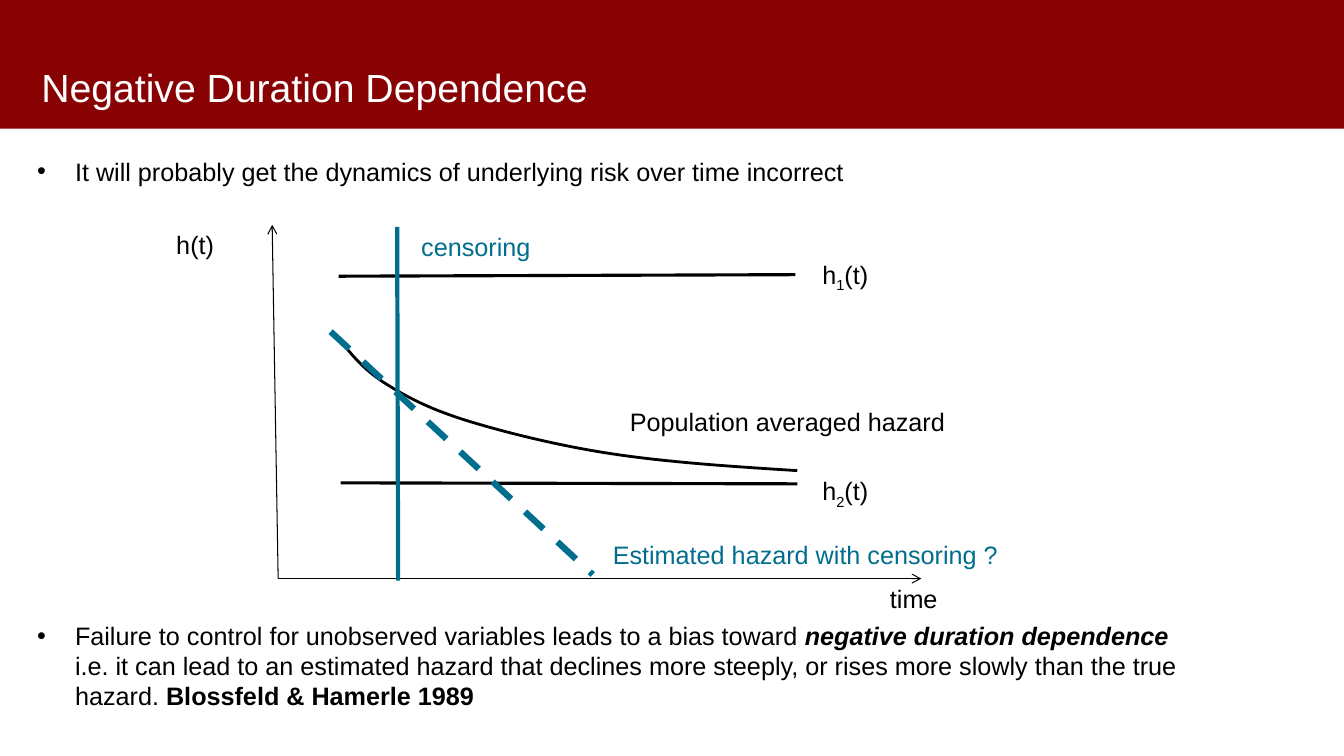
from dataclasses import dataclass
from typing import Any, Optional

from lxml import etree
from pptx import Presentation
from pptx.dml.color import RGBColor
from pptx.enum import dml, shapes, text
from pptx.oxml import ns
from pptx.util import Pt

MAROON = RGBColor(0x89, 0x02, 0x03)
TEAL = RGBColor(0x01, 0x6E, 0x8D)
BLACK = RGBColor(0, 0, 0)
WHITE = RGBColor(255, 255, 255)
FONT = "Arial"
TEXT_SIZE = 18
LABEL_HEIGHT = 28.8
BULLET_INDENT = 27
FIGURE_GAP = 310

Point = tuple[float, float]


@dataclass
class Line:
    start: Point
    end: Point
    width: float
    color: RGBColor = BLACK
    arrow: Optional[str] = None
    dashed: bool = False


@dataclass
class Label:
    left: float
    top: float
    width: float
    wording: str
    color: RGBColor = BLACK
    subscript: str = ""
    ending: str = ""


LINES = [
    Line((194.4, 160.6), (198.7, 413.3), 0.75, arrow="headEnd"),
    Line((198.7, 413.3), (658.1, 413.3), 0.75, arrow="tailEnd"),
    Line((241.9, 197.3), (568.1, 196.2), 2.25),
    Line((243.4, 344.9), (569.5, 345.6), 2.25),
    Line((284.4, 414.7), (283.7, 162), 3, TEAL),
    Line((236.2, 236.9), (423.4, 410.4), 4.5, TEAL, dashed=True),
]

LABELS = [
    Label(118.8, 160.6, 77.8, "h(t)"),
    Label(628.6, 413.3, 69.8, "time"),
    Label(580.3, 181.4, 77.8, "h", subscript="1", ending="(t)"),
    Label(580.3, 336.2, 77.8, "h", subscript="2", ending="(t)"),
    Label(442.8, 286.6, 255.6, "Population averaged hazard"),
    Label(293.8, 162, 235.4, "censoring", TEAL),
    Label(430.6, 381.6, 301, "Estimated hazard with censoring ?", TEAL),
]

# Start point, then two control points and an end point for each cubic segment
AVERAGED_HAZARD = [
    (241.2, 240.5),
    (249.8, 252), (258.5, 262.8), (273.6, 272.9),
    (289.4, 283), (305.3, 291.6), (332.6, 300.2),
    (360.7, 308.9), (401, 319), (440.6, 324.7),
    (480.2, 330.5), (524.9, 333.4), (569.5, 336.2),
]

FAILURE_RUNS = [
    ("Failure to control for unobserved variables leads to a bias toward ", {}),
    ("negative duration dependence", {"bold": True, "italic": True}),
    (" i.e. it can lead to an estimated hazard that declines more steeply, "
     "or rises more slowly than the true hazard. ", {}),
    ("Blossfeld & Hamerle 1989", {"bold": True}),
]


def apply(target: Any, values: dict[str, Any]) -> None:
    for name, value in values.items():
        setattr(target, name, value)


def style_font(font: Any, size: float, color: RGBColor) -> None:
    apply(font, {"name": FONT, "size": Pt(size)})
    font.color.rgb = color


def place(shape: Any, left: float, top: float, width: float, height: float) -> None:
    apply(shape, {"left": Pt(left), "top": Pt(top),
                  "width": Pt(width), "height": Pt(height)})


def draw_header(slide: Any) -> None:
    band = slide.shapes.add_shape(
        shapes.MSO_SHAPE.RECTANGLE, Pt(0), Pt(0), Pt(960), Pt(92))
    band.shadow.inherit = False
    band.fill.solid()
    band.fill.fore_color.rgb = MAROON
    band.line.fill.background()
    heading = slide.shapes.title
    heading._element.addprevious(band._element)
    place(heading, 26.6, 7.9, 620, 74.9)
    apply(heading.text_frame, {
        "text": "Negative Duration Dependence",
        "vertical_anchor": text.MSO_ANCHOR.BOTTOM,
        "auto_size": text.MSO_AUTO_SIZE.NONE,
        "margin_left": Pt(2.9), "word_wrap": True})
    paragraph = heading.text_frame.paragraphs[0]
    paragraph.alignment = text.PP_ALIGN.LEFT
    style_font(paragraph.runs[0].font, 28, WHITE)


def format_bullet(paragraph: Any, space_before: float) -> None:
    properties = paragraph._p.get_or_add_pPr()
    properties.set("marL", str(Pt(BULLET_INDENT)))
    properties.set("indent", str(Pt(-BULLET_INDENT)))
    etree.SubElement(properties, ns.qn("a:buChar"), char="•")
    paragraph.space_before = Pt(space_before)
    style_font(paragraph.font, TEXT_SIZE, BLACK)


def write_bullets(slide: Any) -> None:
    """Fill the body, leaving room for the figure between its two bullets."""
    body = slide.placeholders[1]
    place(body, 19.4, 107.8, 843.1, 406)
    frame = body.text_frame
    apply(frame, {"auto_size": text.MSO_AUTO_SIZE.NONE, "word_wrap": True})
    bullets = [
        ([("It will probably get the dynamics of underlying risk "
           "over time incorrect", {})], 0),
        (FAILURE_RUNS, FIGURE_GAP),
    ]
    for index, (parts, space_before) in enumerate(bullets):
        paragraph = frame.add_paragraph() if index else frame.paragraphs[0]
        format_bullet(paragraph, space_before)
        for wording, emphasis in parts:
            run = paragraph.add_run()
            run.text = wording
            style_font(run.font, TEXT_SIZE, BLACK)
            apply(run.font, emphasis)


def draw_line(slide: Any, line: Line) -> None:
    connector = slide.shapes.add_connector(
        shapes.MSO_CONNECTOR.STRAIGHT,
        *(Pt(value) for value in line.start + line.end))
    connector.line.width = Pt(line.width)
    connector.line.color.rgb = line.color
    if line.dashed:
        connector.line.dash_style = dml.MSO_LINE.DASH
    properties = connector._element.spPr
    if line.arrow:
        outline = properties.find(ns.qn("a:ln"))
        etree.SubElement(outline, ns.qn(f"a:{line.arrow}"), type="arrow")
    etree.SubElement(properties, ns.qn("a:effectLst"))


def draw_curve(slide: Any, points: list[Point]) -> None:
    """Draw an open outline whose points after the first form cubic segments."""
    (start_x, start_y), *rest = [(Pt(x), Pt(y)) for x, y in points]
    builder = slide.shapes.build_freeform(start_x, start_y)
    builder.add_line_segments(rest, close=False)
    curve = builder.convert_to_shape()
    curve.shadow.inherit = False
    curve.fill.background()
    curve.line.color.rgb = BLACK
    curve.line.width = Pt(2)
    steps = list(curve._element.iter(ns.qn("a:lnTo")))
    for first in range(0, len(steps), 3):
        segment = etree.Element(ns.qn("a:cubicBezTo"))
        steps[first].addprevious(segment)
        for step in steps[first:first + 3]:
            segment.append(step[0])
            step.getparent().remove(step)


def write_label(slide: Any, label: Label) -> None:
    box = slide.shapes.add_textbox(
        Pt(label.left), Pt(label.top), Pt(label.width), Pt(LABEL_HEIGHT))
    apply(box.text_frame, {"word_wrap": True,
                           "auto_size": text.MSO_AUTO_SIZE.SHAPE_TO_FIT_TEXT})
    for wording in filter(None, (label.wording, label.subscript, label.ending)):
        run = box.text_frame.paragraphs[0].add_run()
        run.text = wording
        style_font(run.font, TEXT_SIZE, label.color)
        if wording == label.subscript:
            run._r.get_or_add_rPr().set("baseline", "-25000")


def main() -> None:
    deck = Presentation()
    apply(deck, {"slide_width": Pt(960), "slide_height": Pt(540)})
    slide = deck.slides.add_slide(deck.slide_layouts[1])
    draw_header(slide)
    write_bullets(slide)
    draw_curve(slide, AVERAGED_HAZARD)
    for line in LINES:
        draw_line(slide, line)
    for label in LABELS:
        write_label(slide, label)
    deck.save("out.pptx")


if __name__ == "__main__":
    main()
